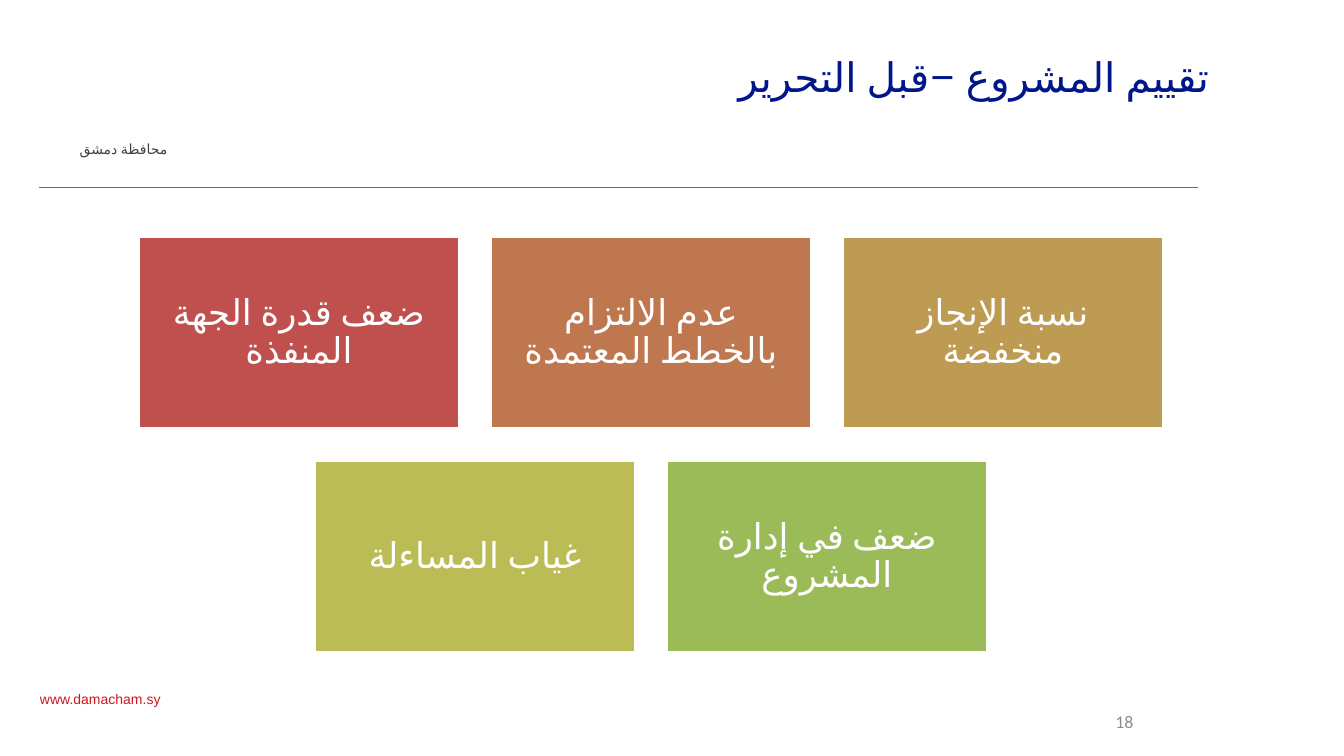
import pptx
import pptx.dml.color
import pptx.enum.lang
import pptx.enum.shapes
import pptx.enum.text
import pptx.oxml.ns
import pptx.util
from lxml import etree

Pt = pptx.util.Pt
ALIGN = pptx.enum.text.PP_ALIGN
ANCHOR = pptx.enum.text.MSO_ANCHOR

COLORS = {
    "title": "001689", "region": "414042", "site": "CD171E",
    "number": "8C8C8C", "rule": "606B8D", "white": "FFFFFF",
    "red": "C0504D", "rust": "BF7750", "ochre": "BD9B53",
    "olive": "BCBC56", "green": "9BBB59",
}
FINDING_ROWS = [
    [("ضعف قدرة الجهة المنفذة", "red"),
     ("عدم الالتزام بالخطط المعتمدة", "rust"),
     ("نسبة الإنجاز منخفضة", "ochre")],
    [("غياب المساءلة", "olive"),
     ("ضعف في إدارة المشروع", "green")],
]
CARD_WIDTH, CARD_HEIGHT, CARD_GAP = 252, 151.2, 25.2
CARDS_CENTER, CARDS_TOP = 512.6, 186.5


def rgb(name):
    return pptx.dml.color.RGBColor.from_string(COLORS[name])


def write(shape, text, font, size, color, align, anchor, inset=0, rtl=False):
    """Fill a shape with one formatted paragraph."""
    frame = shape.text_frame
    frame_format = {
        "word_wrap": True, "vertical_anchor": anchor,
        "auto_size": pptx.enum.text.MSO_AUTO_SIZE.NONE,
        "margin_left": Pt(inset), "margin_right": Pt(inset),
        "margin_top": Pt(inset), "margin_bottom": Pt(inset),
    }
    for key, value in frame_format.items():
        setattr(frame, key, value)
    paragraph = frame.paragraphs[0]
    paragraph.alignment = align
    run = paragraph.add_run()
    run.text = text
    for key, value in {"name": font, "size": Pt(size), "bold": False}.items():
        setattr(run.font, key, value)
    run.font.color.rgb = rgb(color)
    if rtl:
        run.font.language_id = pptx.enum.lang.MSO_LANGUAGE_ID.ARABIC_SYRIA
        paragraph._p.get_or_add_pPr().set("rtl", "1")
        script_font = etree.SubElement(run._r.get_or_add_rPr(), pptx.oxml.ns.qn("a:cs"))
        script_font.set("typeface", font)
    return paragraph


def add_label(slide, box, *text_format, **options):
    label = slide.shapes.add_textbox(*map(Pt, box))
    write(label, *text_format, **options)


def add_title(slide, text):
    title = slide.shapes.title
    for key, value in {"left": 181.4, "top": 33.8, "width": 778.3, "height": 85}.items():
        setattr(title, key, Pt(value))
    write(title, text, "Roboto", 32, "title", ALIGN.RIGHT, ANCHOR.TOP,
          inset=7.2, rtl=True)


def add_rule(slide):
    rule = slide.shapes.add_connector(
        pptx.enum.shapes.MSO_CONNECTOR.STRAIGHT,
        Pt(31), Pt(147.6), Pt(943.2), Pt(147.6))
    rule.line.color.rgb = rgb("rule")
    rule.line.width = Pt(0.75)
    etree.SubElement(rule._element.spPr, pptx.oxml.ns.qn("a:effectLst"))


def add_card(slide, left, top, finding, color):
    card = slide.shapes.add_shape(
        pptx.enum.shapes.MSO_SHAPE.RECTANGLE,
        Pt(left), Pt(top), Pt(CARD_WIDTH), Pt(CARD_HEIGHT))
    card.shadow.inherit = False
    card.fill.solid()
    card.fill.fore_color.rgb = rgb(color)
    card.line.color.rgb = rgb("white")
    card.line.width = Pt(2)
    paragraph = write(card, finding, "Roboto", 28, "white", ALIGN.CENTER,
                      ANCHOR.MIDDLE, inset=8.64, rtl=True)
    paragraph.line_spacing = 0.9


def add_findings(slide):
    """Lay out the cards in rows, each centred on the same axis."""
    for row, findings in enumerate(FINDING_ROWS):
        row_width = len(findings) * (CARD_WIDTH + CARD_GAP) - CARD_GAP
        row_left = CARDS_CENTER - row_width / 2
        top = CARDS_TOP + row * (CARD_HEIGHT + CARD_GAP)
        for column, (finding, color) in enumerate(findings):
            left = row_left + column * (CARD_WIDTH + CARD_GAP)
            add_card(slide, left, top, finding, color)


def main():
    deck = pptx.Presentation()
    deck.slide_width, deck.slide_height = Pt(1058.4), Pt(595.44)
    slide = deck.slides.add_slide(deck.slide_layouts[5])
    add_title(slide, "تقييم المشروع –قبل التحرير")
    add_label(slide, (13, 106.6, 168.4, 20.8), "محافظة دمشق", "Lato", 11,
              "region", ALIGN.CENTER, ANCHOR.MIDDLE, rtl=True)
    add_rule(slide)
    add_findings(slide)
    add_label(slide, (31.5, 540, 144, 21), "www.damacham.sy", "Arial", 11,
              "site", ALIGN.LEFT, ANCHOR.MIDDLE)
    add_label(slide, (762, 552.2, 247, 31.7), "18", "Calibri", 14,
              "number", ALIGN.CENTER, ANCHOR.MIDDLE)
    deck.save("out.pptx")


if __name__ == "__main__":
    main()
